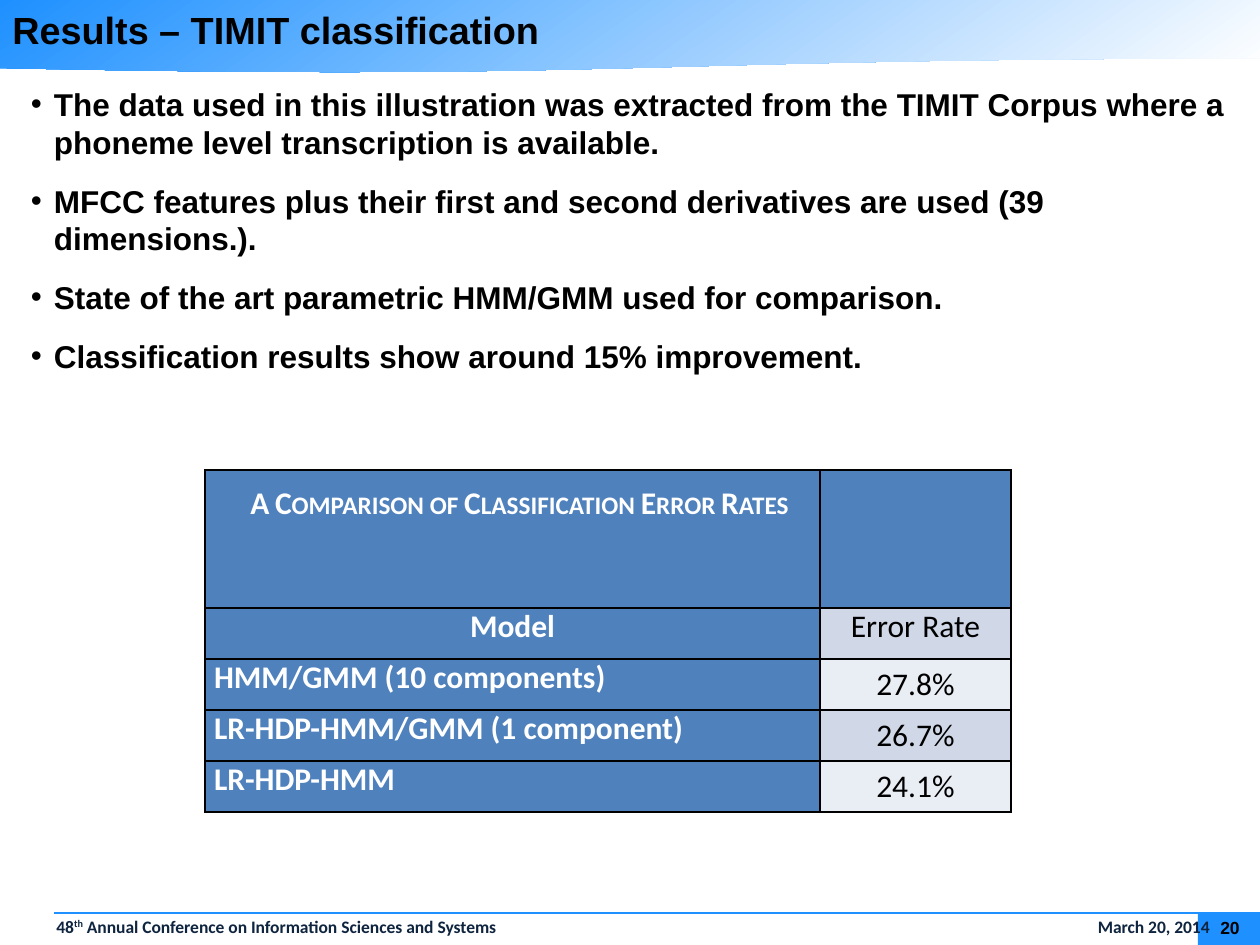
from dataclasses import dataclass

from lxml import etree
from pptx import Presentation
from pptx import util as u
from pptx.dml.color import RGBColor
from pptx.enum import shapes, text
from pptx.oxml.ns import qn

PX = 914400 / 126  # EMU in one px
COLORS = {
    "accent": "1E90FF", "white": "FFFFFF", "black": "000000", "navy": "0F243E",
    "head": "4F81BD", "band_dark": "D0D8E8", "band_light": "E9EDF4",
}
ALIGN, ANCHOR = text.PP_ALIGN, text.MSO_ANCHOR


@dataclass(frozen=True)
class Box:
    left: int
    top: int
    width: int
    height: int

    def emu(self) -> list[int]:
        return [px(v) for v in (self.left, self.top, self.width, self.height)]


@dataclass(frozen=True)
class Style:
    font: str
    size: float
    color: str
    bold: bool = True


@dataclass(frozen=True)
class CellText:
    words: str
    fill: str
    color: str = "white"
    align: ALIGN = ALIGN.CENTER
    anchor: ANCHOR = ANCHOR.TOP


def px(value: int) -> int:
    return round(value * PX)


def rgb(name: str) -> RGBColor:
    return RGBColor.from_string(COLORS[name])


def format_runs(p, style: Style) -> None:
    for r in p.runs:
        r.font.name, r.font.size = style.font, u.Pt(style.size)
        r.font.bold, r.font.color.rgb = style.bold, rgb(style.color)


def add_text(s, box: Box, words: str, style: Style, inset: bool = True):
    tf = s.shapes.add_textbox(*box.emu()).text_frame
    tf.word_wrap = True
    if not inset:
        tf.margin_left = tf.margin_right = tf.margin_top = tf.margin_bottom = 0
    tf.text = words
    for p in tf.paragraphs:
        format_runs(p, style)
    return tf


def add_panel(s, kind: shapes.MSO_SHAPE, box: Box):
    sp = s.shapes.add_shape(kind, *box.emu())
    sp.shadow.inherit = False
    sp.line.fill.background()
    sp.fill.solid()
    sp.fill.fore_color.rgb = rgb("accent")
    return sp


def add_frame(s) -> None:
    """Draw the header band, the page number block and the footer rule."""
    band = add_panel(s, shapes.MSO_SHAPE.FLOWCHART_DOCUMENT, Box(0, 0, 1261, 73))
    band.fill.gradient()
    band.fill.gradient_angle = 305
    for stop, name in zip(band.fill.gradient_stops, ("accent", "white")):
        stop.color.rgb = rgb(name)
    add_panel(s, shapes.MSO_SHAPE.RECTANGLE, Box(1198, 912, 63, 33))
    rule = s.shapes.add_connector(shapes.MSO_CONNECTOR.STRAIGHT,
                                  px(54), px(913), px(1260), px(913))
    rule.line.color.rgb, rule.line.width = rgb("accent"), u.Pt(1.5)
    etree.SubElement(rule._element.spPr, qn("a:effectLst"))


def add_footer(s) -> None:
    style = Style("Calibri", 10, "navy")
    p = add_text(s, Box(5, 911, 1256, 33), "48", style).paragraphs[0]
    ordinal = p.add_run()
    ordinal.text = "th"
    p.add_run().text = " Annual Conference on Information Sciences and Systems\tMarch 20, 2014"
    format_runs(p, style)
    ordinal._r.get_or_add_rPr().set("baseline", "30000")
    p.line_spacing = 0.95
    pPr = p._p.get_or_add_pPr()
    pPr.set("marL", str(px(39)))
    tabs = etree.SubElement(pPr, qn("a:tabLst"))
    etree.SubElement(tabs, qn("a:tab"), pos=str(px(1173)), algn="r")
    number = add_text(s, Box(1205, 917, 50, 21), "20", Style("Arial", 10, "black"), inset=False)
    number.vertical_anchor = ANCHOR.MIDDLE
    number.paragraphs[0].alignment = ALIGN.CENTER


def add_bullets(s, box: Box, items: list[str]) -> None:
    tf = add_text(s, box, "\n".join(items), Style("Arial", 18, "black"), inset=False)
    for p in tf.paragraphs:
        p.space_after = u.Pt(12)
        pPr = p._p.get_or_add_pPr()
        pPr.set("marL", str(px(23)))
        pPr.set("indent", str(px(-23)))
        etree.SubElement(pPr, qn("a:buFont"), typeface="Arial")
        etree.SubElement(pPr, qn("a:buChar"), char="•")


def add_borders(cell) -> None:
    tcPr = cell._tc.get_or_add_tcPr()
    for side in ("lnL", "lnR", "lnT", "lnB"):
        ln = etree.SubElement(tcPr, qn(f"a:{side}"), w=str(u.Pt(1)))
        fill = etree.SubElement(ln, qn("a:solidFill"))
        etree.SubElement(fill, qn("a:srgbClr"), val=COLORS["black"])


def fill_cell(cell, content: CellText) -> None:
    add_borders(cell)
    cell.fill.solid()
    cell.fill.fore_color.rgb = rgb(content.fill)
    cell.margin_left = cell.margin_right = px(9)
    cell.margin_top = cell.margin_bottom = 0
    cell.vertical_anchor = content.anchor
    cell.text = content.words
    p = cell.text_frame.paragraphs[0]
    p.alignment = content.align
    format_runs(p, Style("Calibri", 18, content.color, content.color == "white"))


def add_results(s, box: Box, cols: list[int], rows: list[int],
                content: list[list[CellText]]) -> None:
    table = s.shapes.add_table(len(rows), len(cols), *box.emu()).table
    for col, width in zip(table.columns, cols):
        col.width = px(width)
    for row, height, cells in zip(table.rows, rows, content):
        row.height = px(height)
        for cell, cell_text in zip(row.cells, cells):
            fill_cell(cell, cell_text)
    caption = table.cell(0, 0)
    caption.margin_left, caption.margin_right = px(39), px(25)
    caption.margin_top = caption.margin_bottom = px(14)
    p = caption.text_frame.paragraphs[0]
    p.space_after = u.Pt(6)
    p.runs[0]._r.get_or_add_rPr().set("cap", "small")


def main() -> None:
    prs = Presentation()
    prs.slide_width, prs.slide_height = px(1260), px(945)
    s = prs.slides.add_slide(prs.slide_layouts[6])
    add_frame(s)
    add_footer(s)
    add_text(s, Box(0, 0, 1260, 54), "Results – TIMIT classification",
             Style("Arial", 21.6, "black"))
    add_bullets(s, Box(31, 85, 1197, 471), [
        "The data used in this illustration was extracted from the TIMIT Corpus "
        "where a phoneme level transcription is available.",
        "MFCC features plus their first and second derivatives are used (39 dimensions.).",
        "State of the art parametric HMM/GMM used for comparison.",
        "Classification results show around 15% improvement.",
    ])
    content = [
        [CellText("A Comparison of Classification Error Rates", "head"), CellText("", "head")],
        [CellText("Model", "head"), CellText("Error Rate", "band_dark", "black")],
    ]
    rates = [("HMM/GMM (10 components)", "27.8%"),
             ("LR-HDP-HMM/GMM (1 component)", "26.7%"),
             ("LR-HDP-HMM", "24.1%")]
    for i, (model, rate) in enumerate(rates):
        band = "band_dark" if i % 2 else "band_light"
        content.append([CellText(model, "head", align=ALIGN.JUSTIFY),
                        CellText(rate, band, "black", anchor=ANCHOR.MIDDLE)])
    add_results(s, Box(205, 470, 806, 341), [615, 191], [138] + [51] * 4, content)
    prs.save("out.pptx")


if __name__ == "__main__":
    main()
